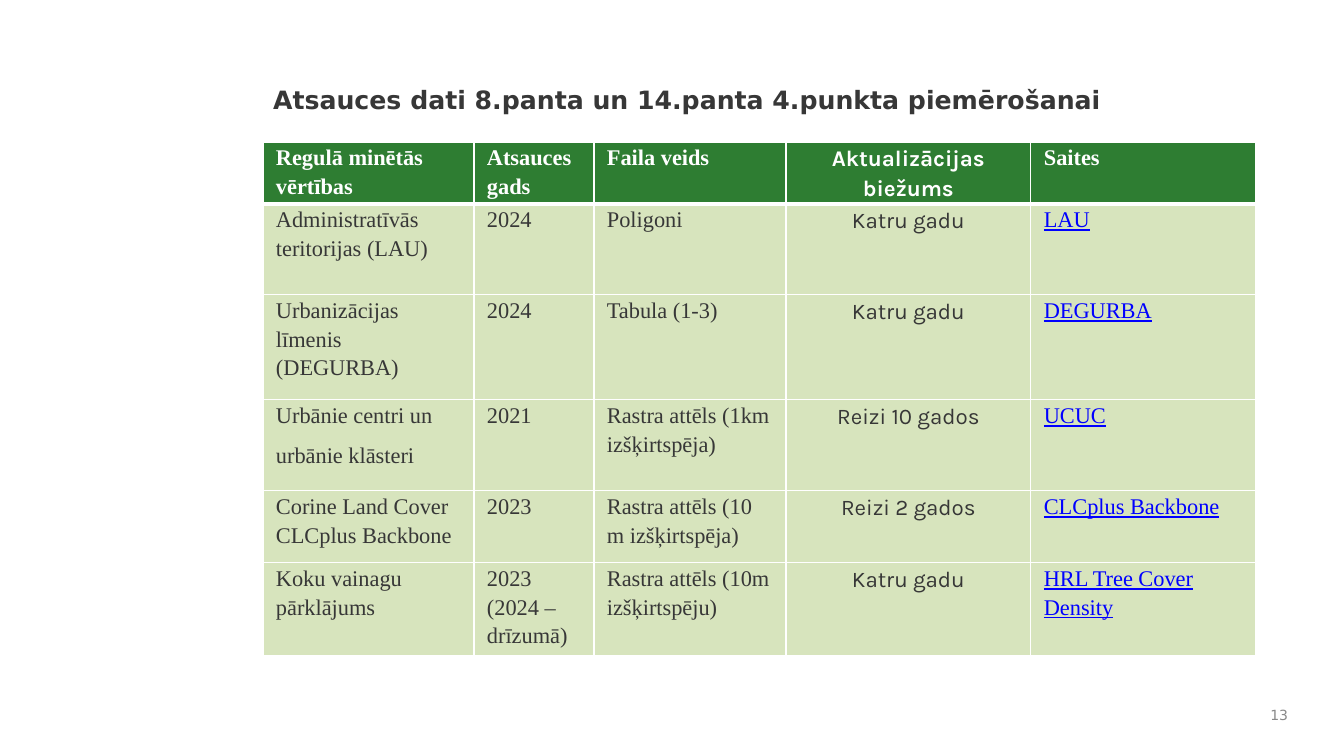
"""Build the slide of reference data sets as a title, a table and a page number."""
from lxml import etree
from pptx import Presentation
from pptx.dml.color import RGBColor
from pptx.enum.text import MSO_ANCHOR, PP_ALIGN
from pptx.oxml.ns import qn
from pptx.util import Pt

LEFT, MID, RIGHT = PP_ALIGN.LEFT, PP_ALIGN.CENTER, PP_ALIGN.RIGHT
CENTER = MSO_ANCHOR.MIDDLE
SCALE = 12192000 / 1344
THEME = {
    "head": "2E7D32", "body": "D7E4BD", "rule": "FFFFFF",
    "title": {"name": "DejaVu Sans", "size": 18, "color": "373737", "bold": True},
    "page": {"name": "DejaVu Sans", "size": 10, "color": "898989"},
    "label": {"name": "Times New Roman", "size": 16, "color": "FFFFFF", "bold": True},
    "cell": {"name": "Times New Roman", "size": 16, "color": "373737", "bold": False},
    "link": {"color": "0000FF", "underline": True},
    "cycle": {"name": "Karla"},
}


def px(num):
    """Turn pixels into EMU."""
    return round(num * SCALE)


def write(frame, text, style, para):
    """Fill a text frame, one paragraph a line, with font and paragraph formats."""
    frame.text = text
    for line in frame.paragraphs:
        for key, val in para.items():
            setattr(line, key, val)
        font = line.runs[0].font
        for key, val in style.items():
            if key == "color":
                font.color.rgb = RGBColor.from_string(val)
            else:
                setattr(font, key, Pt(val) if key == "size" else val)


deck = Presentation()
deck.slide_width, deck.slide_height = px(1344), px(756)
slide = deck.slides.add_slide(deck.slide_layouts[5])

title = slide.shapes.title
page = slide.shapes.add_textbox(0, 0, 0, 0)
texts = [
    (title, (263, 42, 896, 114), "Atsauces dati 8.panta un 14.panta 4.punkta piemērošanai",
     THEME["title"], {"alignment": LEFT}),
    (page, (1254, 698, 44, 33), "13", THEME["page"],
     {"alignment": RIGHT, "space_after": Pt(6)}),
]
for shape, box, text, style, para in texts:
    shape.left, shape.top, shape.width, shape.height = map(px, box)
    shape.text_frame.word_wrap = True
    shape.text_frame.vertical_anchor = CENTER
    write(shape.text_frame, text, style, para)

rows = [
    ("Regulā minētās vērtības", "Atsauces gads", "Faila veids",
     "Aktualizācijas biežums", "Saites"),
    ("Administratīvās teritorijas (LAU)", "2024", "Poligoni", "Katru gadu", "LAU"),
    ("Urbanizācijas līmenis (DEGURBA)", "2024", "Tabula (1-3)", "Katru gadu", "DEGURBA"),
    ("Urbānie centri un\nurbānie klāsteri", "2021", "Rastra attēls (1km izšķirtspēja)",
     "Reizi 10 gados", "UCUC"),
    ("Corine Land Cover CLCplus Backbone", "2023", "Rastra attēls (10 m izšķirtspēja)",
     "Reizi 2 gados", "CLCplus Backbone"),
    ("Koku vainagu pārklājums", "2023 (2024 – drīzumā)", "Rastra attēls (10m izšķirtspēju)",
     "Katru gadu", "HRL Tree Cover Density"),
]
wide = [211, 120, 192, 245, 225]
high = [38, 91, 105, 91, 72, 72]
CYCLE, LINK = 3, 4

frame = slide.shapes.add_table(len(rows), len(wide), px(263), px(142), px(sum(wide)), px(511))
table = frame.table
table.horz_banding = False
for col, num in zip(table.columns, wide):
    col.width = px(num)
for row, num in zip(table.rows, high):
    row.height = px(num)
frame.height = px(511)

margins = {"margin_left": px(13), "margin_right": px(13), "margin_top": 0, "margin_bottom": 0}
for y, row in enumerate(rows):
    for x, text in enumerate(row):
        cell = table.cell(y, x)
        for key, val in margins.items():
            setattr(cell, key, val)
        style = dict(THEME["cell"] if y else THEME["label"])
        if x == CYCLE:
            style.update(THEME["cycle"])
        if x == LINK and y:
            style.update(THEME["link"])
        write(cell.text_frame, text, style,
              {"alignment": MID if x == CYCLE else LEFT,
               "line_spacing": 1.15, "space_after": Pt(8)})
        cell.fill.solid()
        cell.fill.fore_color.rgb = RGBColor.from_string(THEME["body"] if y else THEME["head"])
        props = cell._tc.get_or_add_tcPr()
        for spot, side in enumerate("LRTB"):
            edge = etree.Element(qn("a:ln" + side))
            edge.set("w", str(Pt(3 if y == 0 and side == "B" else 1)))
            fill = etree.SubElement(edge, qn("a:solidFill"))
            etree.SubElement(fill, qn("a:srgbClr")).set("val", THEME["rule"])
            props.insert(spot, edge)

deck.save("out.pptx")
